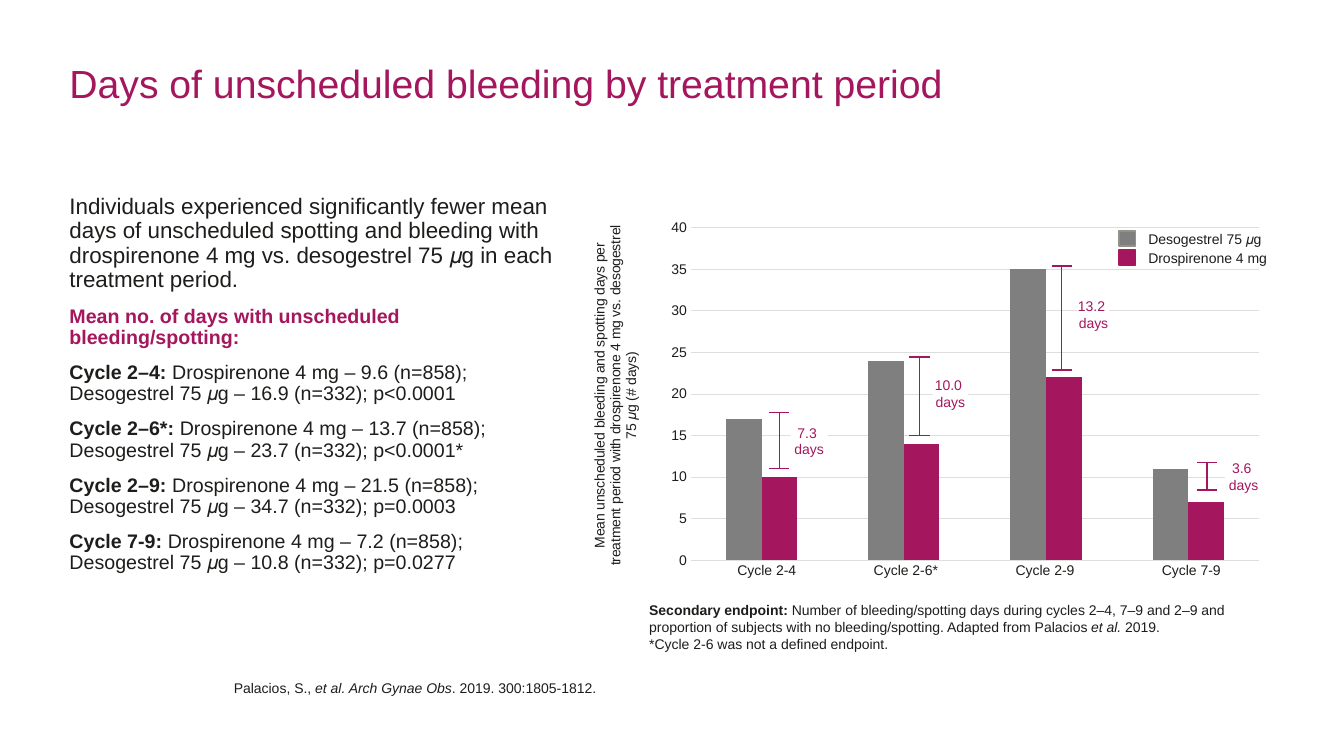
"""Build a slide on days of unscheduled bleeding by treatment period."""
from lxml import etree
from pptx import Presentation
from pptx.chart.data import CategoryChartData
from pptx.dml.color import RGBColor
from pptx.enum.chart import XL_CHART_TYPE, XL_TICK_MARK
from pptx.enum.shapes import MSO_CONNECTOR, MSO_SHAPE
from pptx.enum.text import MSO_ANCHOR, PP_ALIGN
from pptx.oxml import parse_xml
from pptx.oxml.ns import nsdecls, qn
from pptx.util import Inches, Pt

COLUMN = XL_CHART_TYPE.COLUMN_CLUSTERED
NO_TICK = XL_TICK_MARK.NONE
LINE = MSO_CONNECTOR.STRAIGHT
RECT = MSO_SHAPE.RECTANGLE
TOP, MIDDLE = MSO_ANCHOR.TOP, MSO_ANCHOR.MIDDLE
LEFT, CENTER = PP_ALIGN.LEFT, PP_ALIGN.CENTER

INK, PLUM, GRAY, WHITE, GRID = "1D1D1B", "A4165D", "7F7F7F", "FFFFFF", "DEDEDC"
BOLD, ITALIC = {"bold": True}, {"italic": True}

TITLE = "Days of unscheduled bleeding by treatment period"
INTRO = ("Individuals experienced significantly fewer mean days of unscheduled spotting "
         "and bleeding with drospirenone 4 mg vs. desogestrel 75 𝜇g in each treatment period.")
HEAD = "Mean no. of days with unscheduled bleeding/spotting:"
CYCLES = [
    ("Cycle 2–4: ", "9.6", "16.9", "p<0.0001"),
    ("Cycle 2–6*: ", "13.7", "23.7", "p<0.0001*"),
    ("Cycle 2–9: ", "21.5", "34.7", "p=0.0003"),
    ("Cycle 7-9: ", "7.2", "10.8", "p=0.0277"),
]
AXIS = ("Mean unscheduled bleeding and spotting days per treatment period with "
        "drospirenone 4 mg vs. desogestrel 75 𝜇g (# days)")
TICKS = [("Cycle 2-4", 7.07), ("Cycle 2-6*", 8.45), ("Cycle 2-9", 9.83), ("Cycle 7-9", 11.28)]
SERIES = [("Desogestrel 75 𝜇g", GRAY, "929289", (17, 24, 35, 11)),
          ("Drospirenone 4 mg", PLUM, "A6175D", (10, 14, 22, 7))]
GAPS = [
    ("7.3 ", 7.73, 4.09, 4.65, (7.84, 4.16, 0.37, 0.43)),
    ("10.0 ", 9.12, 3.54, 4.32, (9.25, 3.69, 0.35, 0.42)),
    ("13.2 ", 10.53, 2.64, 3.67, (10.69, 2.92, 0.31, 0.4)),
    ("3.6 ", 11.97, 4.59, 4.86, (12.15, 4.51, 0.37, 0.43)),
]
NOTE = [
    ("Secondary endpoint: ", BOLD),
    ("Number of bleeding/spotting days during cycles 2–4, 7–9 and 2–9 and proportion of "
     "subjects with no bleeding/spotting. Adapted from Palacios ", {}),
    ("et al. ", ITALIC),
    ("2019.\n*Cycle 2-6 was not a defined endpoint.", {}),
]
CITE = [("Palacios, S., ", {}), ("et al. Arch Gynae Obs", ITALIC),
        (". 2019. 300:1805-1812.", {})]
CAP = 0.1
WIDE, HIGH = 6.95, 4.3


def rgb(code):
    return RGBColor.from_string(code)


def style(font, size=10, color=INK, **extra):
    values = {"name": "Arial", "size": Pt(size), "bold": False, "italic": False, **extra}
    for key, value in values.items():
        setattr(font, key, value)
    font.color.rgb = rgb(color)


def write(frame, paras, align=LEFT, space=0, line=1.0):
    frame.word_wrap = True
    for i, runs in enumerate(paras):
        para = frame.add_paragraph() if i else frame.paragraphs[0]
        look = {"alignment": align, "line_spacing": line, "space_before": Pt(space if i else 0)}
        for key, value in look.items():
            setattr(para, key, value)
        for text, form in runs:
            for j, part in enumerate(text.split("\n")):
                if j:
                    para.add_line_break()
                run = para.add_run()
                run.text = part
                style(run.font, **form)


def label(slide, box, paras, **form):
    frame = slide.shapes.add_textbox(*map(Inches, box)).text_frame
    frame.vertical_anchor = TOP
    write(frame, paras, **form)


def block(slide, box, fill, edge=None):
    shape = slide.shapes.add_shape(RECT, *map(Inches, box))
    shape.shadow.inherit = False
    shape.fill.solid()
    shape.fill.fore_color.rgb = rgb(fill)
    if edge:
        shape.line.color.rgb = rgb(edge)
        shape.line.width = Pt(1)
    else:
        shape.line.fill.background()
    return shape


def rule(slide, *ends):
    line = slide.shapes.add_connector(LINE, *map(Inches, ends))
    line.line.color.rgb = rgb(PLUM)
    line.line.width = Pt(1)
    etree.SubElement(line._element.spPr, qn("a:effectLst"))


def layout(inner, **spots):
    target = '<c:layoutTarget val="inner"/>' if inner else ""
    modes = "".join(f'<c:{k}Mode val="edge"/>' for k in "xy")
    sizes = "".join(f'<c:{k} val="{v / (WIDE if k in "xw" else HIGH):.4f}"/>'
                    for k, v in spots.items())
    return parse_xml(f'<c:layout {nsdecls("c")}><c:manualLayout>{target}{modes}{sizes}'
                     '</c:manualLayout></c:layout>')


def place(parent, item, after=None):
    for old in parent.findall(qn("c:layout")):
        parent.remove(old)
    if after is None:
        parent.insert(0, item)
    else:
        after.addnext(item)


def plot(slide):
    data = CategoryChartData()
    data.categories = [name for name, _ in TICKS]
    for name, _, _, days in SERIES:
        data.add_series(name, days)
    box = map(Inches, (5.7, 1.89, WIDE, HIGH))
    chart = slide.shapes.add_chart(COLUMN, *box, data).chart
    chart.has_legend = chart.has_title = False
    style(chart.font)
    bars = chart.plots[0]
    for key, value in {"gap_width": 200, "overlap": 0, "vary_by_categories": False}.items():
        setattr(bars, key, value)
    for bar, (_, color, _, _) in zip(bars.series, SERIES):
        bar.format.fill.solid()
        bar.format.fill.fore_color.rgb = rgb(color)
    chart.category_axis.visible = False
    axis = chart.value_axis
    scale = {"minimum_scale": 0, "maximum_scale": 40, "major_unit": 5,
             "major_tick_mark": NO_TICK, "minor_tick_mark": NO_TICK}
    for key, value in scale.items():
        setattr(axis, key, value)
    style(axis.tick_labels.font)
    axis.format.line.fill.background()
    grid = axis.major_gridlines.format.line
    grid.color.rgb = rgb(GRID)
    grid.width = Pt(0.75)
    title = axis.axis_title
    write(title.text_frame, [[(AXIS, {})]], align=CENTER)
    body = title._element.find(".//" + qn("a:bodyPr"))
    body.set("rot", "-5400000")
    body.set("vert", "horz")
    place(title._element, layout(False, x=0.13, y=0.32), title._element.find(qn("c:tx")))
    area = chart._chartSpace.find(".//" + qn("c:plotArea"))
    place(area, layout(True, x=1.15, y=0.37, w=5.64, h=3.3))


def main():
    deck = Presentation()
    deck.slide_width, deck.slide_height = Inches(13.33), Inches(7.5)
    slide = deck.slides.add_slide(deck.slide_layouts[6])
    label(slide, (0.59, 0.59, 12.06, 0.4), [[(TITLE, {"size": 28, "color": PLUM})]], line=0.9)
    label(slide, (2.22, 6.69, 10.51, 0.27), [CITE])
    plot(slide)

    paras = [[(INTRO, {"size": 16})], [(HEAD, {"size": 14, "color": PLUM, "bold": True})]]
    for name, dros, deso, prob in CYCLES:
        text = f"Drospirenone 4 mg – {dros} (n=858);\nDesogestrel 75 𝜇g – {deso} (n=332); {prob}"
        paras.append([(name, {"size": 14, "bold": True}), (text, {"size": 14})])
    label(slide, (0.59, 1.89, 5.02, 4.42), paras, space=10, line=0.9)

    for name, left in TICKS:
        label(slide, (left, 5.52, 1.07, 0.27), [[(name, {})]], align=CENTER)
    for days, x, top, low, box in GAPS:
        rule(slide, x, top, x, low)
        for y in (top, low):
            rule(slide, x - CAP, y, x + CAP, y)
        frame = block(slide, box, WHITE).text_frame
        frame.margin_left = frame.margin_right = 0
        frame.vertical_anchor = MIDDLE
        write(frame, [[(word, {"color": PLUM})] for word in (days, "days")], align=CENTER)
    for i, (name, fill, edge, _) in enumerate(SERIES):
        y = 2.24 + 0.19 * i
        block(slide, (11.1, y + 0.05, 0.16, 0.15), fill, edge)
        label(slide, (11.29, y, 1.71, 0.27), [[(name, {})]])
    label(slide, (6.34, 5.92, 6.15, 0.61), [NOTE])
    deck.save("out.pptx")


if __name__ == "__main__":
    main()
